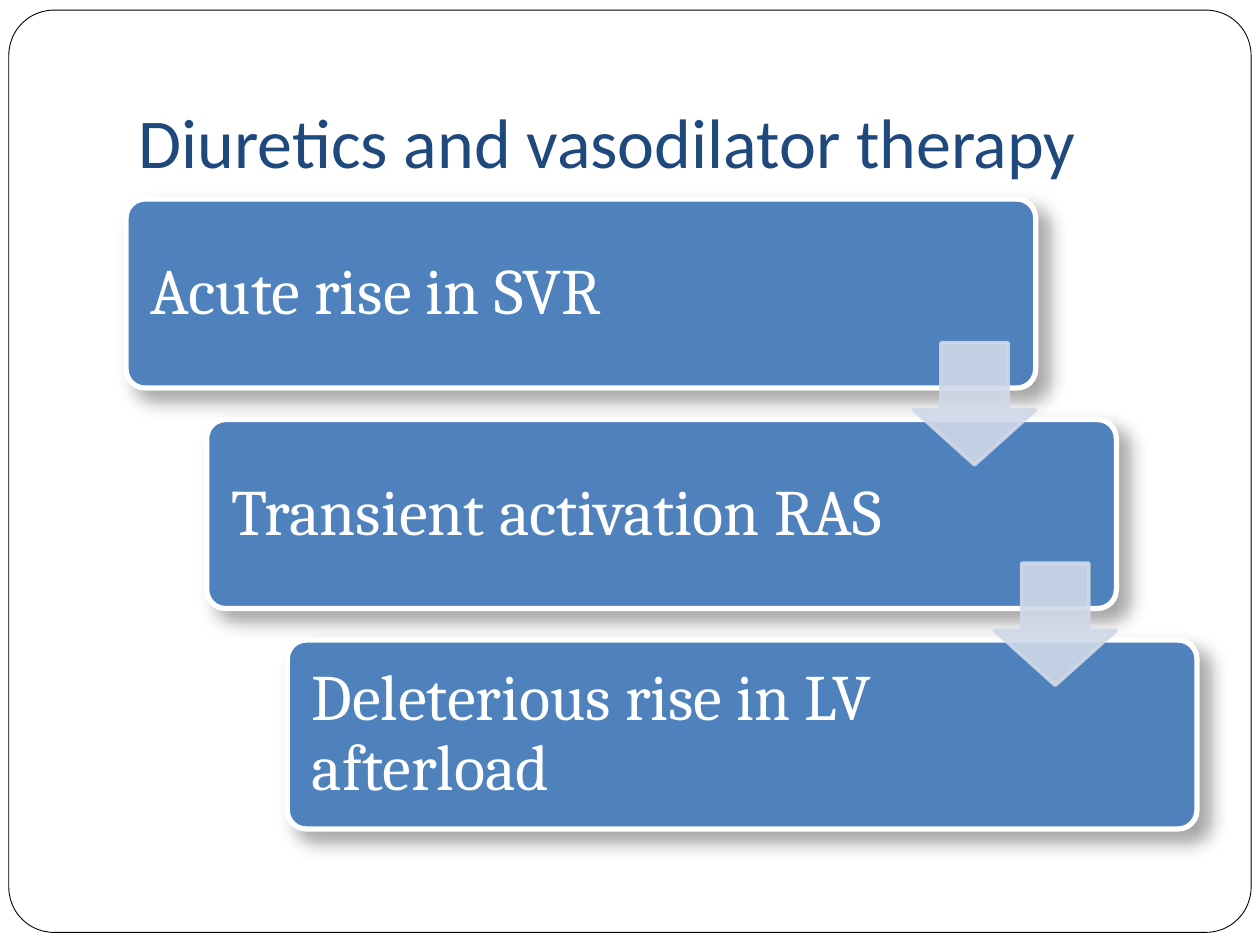
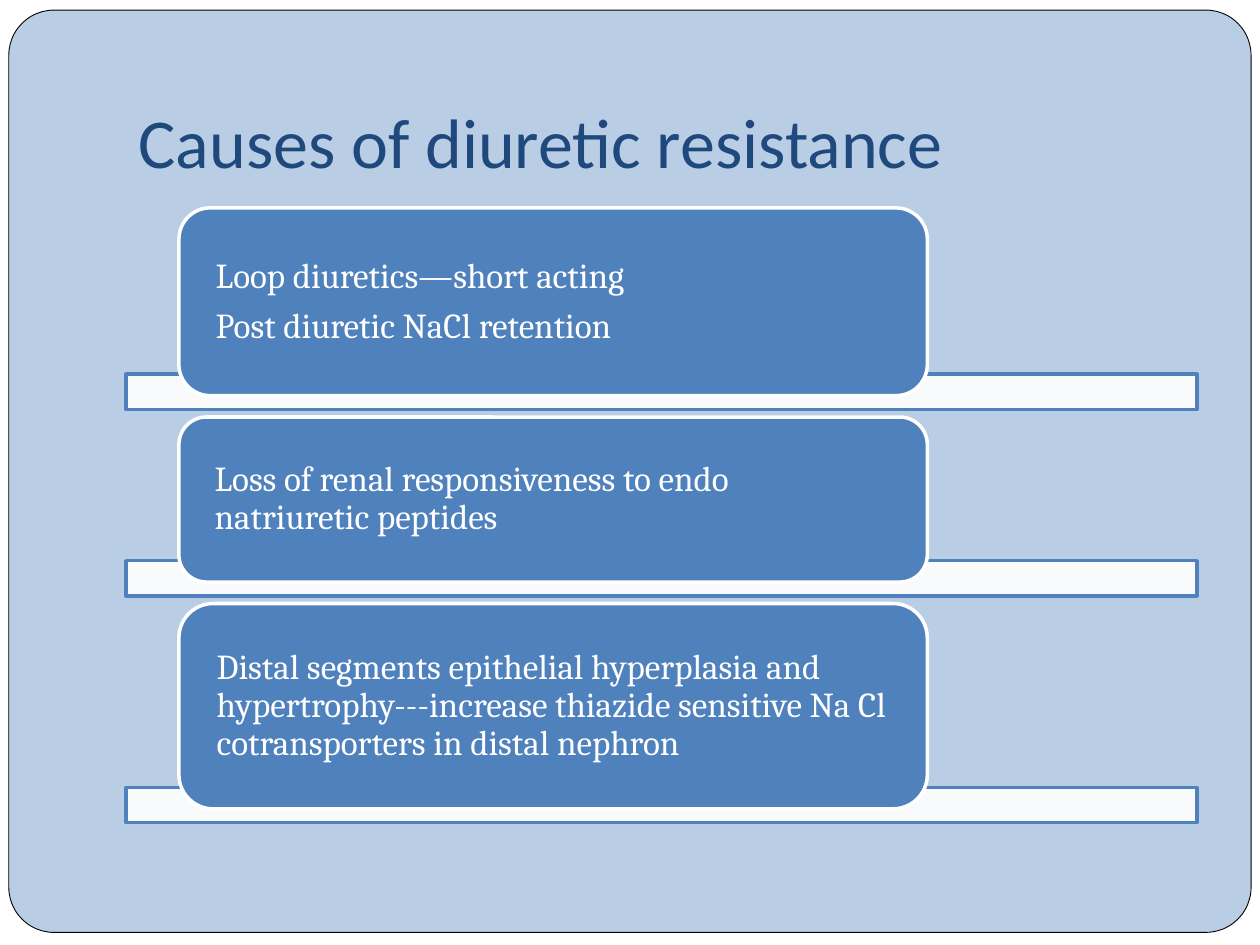
from lxml import etree
from pptx import Presentation
from pptx.dml.color import RGBColor
from pptx.enum.shapes import MSO_SHAPE
from pptx.enum.text import MSO_ANCHOR, MSO_AUTO_SIZE, PP_ALIGN
from pptx.oxml.ns import qn
from pptx.util import Emu, Pt

ROUNDED = MSO_SHAPE.ROUNDED_RECTANGLE
RECTANGLE = MSO_SHAPE.RECTANGLE
DOWN_ARROW = MSO_SHAPE.DOWN_ARROW
MIDDLE, BOTTOM = MSO_ANCHOR.MIDDLE, MSO_ANCHOR.BOTTOM
LEFT = PP_ALIGN.LEFT
NO_FIT = MSO_AUTO_SIZE.NONE

EMU_PER_PX = 9144
TITLE_ONLY = 5
TITLE_FONT, BODY_FONT = "Calibri", "Cambria"
COLORS = {
    "white": "FFFFFF",
    "black": "000000",
    "navy": "1F497D",
    "blue": "4F81BD",
    "pale": "B9CDE5",
    "arrow": "D0D8E8",
}

STEPS = [
    "Acute rise in SVR",
    "Transient activation RAS",
    "Deleterious rise in LV afterload",
]
CAUSES = [
    (149, ["Loop diuretics—short acting", "Post diuretic NaCl retention"]),
    (131, ["Loss of renal responsiveness to endo natriuretic peptides"]),
    (163, ["Distal segments epithelial hyperplasia and hypertrophy---increase "
           "thiazide sensitive Na Cl cotransporters in distal nephron"]),
]


def px(length):
    return Emu(length * EMU_PER_PX)


def rgb(name):
    return RGBColor.from_string(COLORS[name])


class SlideBuilder:
    """Hold the shared style and the current slide, and draw each kind of element."""

    def __init__(self):
        self.deck = Presentation()
        self.deck.slide_width, self.deck.slide_height = px(1000), px(750)
        self.page = None

    def start(self, title, ground):
        layout = self.deck.slide_layouts[TITLE_ONLY]
        self.page = self.deck.slides.add_slide(layout)
        panel = self.shape(ROUNDED, (7, 8, 986, 732), ground, "black", 0.5, [0.049])
        panel.element.getparent().insert(2, panel.element)
        heading = self.page.shapes.title
        heading.left, heading.top, heading.width, heading.height = map(px, (100, 30, 850, 125))
        self.fill_text(heading, [title], 40, TITLE_FONT, "navy", (10, 5, 10, 10), BOTTOM)

    def shape(self, kind, place, fill, line, weight, adjust=()):
        box = self.page.shapes.add_shape(kind, *map(px, place))
        for index, value in enumerate(adjust):
            box.adjustments[index] = value
        box.fill.solid()
        box.fill.fore_color.rgb = rgb(fill)
        box.line.color.rgb = rgb(line)
        box.line.width = Pt(weight)
        box.shadow.inherit = False
        return box

    def fill_text(self, box, lines, size, font, color, insets,
                  anchor=MIDDLE, spacing=1.0, after=0):
        frame = box.text_frame
        frame.word_wrap = True
        frame.auto_size = NO_FIT
        frame.vertical_anchor = anchor
        (frame.margin_left, frame.margin_top,
         frame.margin_right, frame.margin_bottom) = map(px, insets)
        for index, line in enumerate(lines):
            para = frame.add_paragraph() if index else frame.paragraphs[0]
            para.alignment = LEFT
            para.line_spacing = spacing
            para.space_after = Pt(after)
            span = para.add_run()
            span.text = line
            span.font.size = Pt(size)
            span.font.name = font
            span.font.color.rgb = rgb(color)

    def card(self, place, lines, size, insets, weight, adjust=()):
        box = self.shape(ROUNDED, place, "blue", "white", weight, adjust)
        self.fill_text(box, lines, size, BODY_FONT, "white", insets,
                       spacing=0.9, after=round(size * 0.35))
        return box

    def arrow(self, place):
        box = self.shape(DOWN_ARROW, place, "arrow", "arrow", 2, [0.55, 0.45])
        self.fade(box, 90, "a:solidFill", "a:ln")

    def bar(self, place):
        box = self.shape(RECTANGLE, place, "white", "blue", 2)
        self.fade(box, 90, "a:solidFill")

    def fade(self, box, percent, *parents):
        properties = box.element.spPr
        for parent in parents:
            color = next(properties.find(qn(parent)).iter(qn("a:srgbClr")))
            etree.SubElement(color, qn("a:alpha"), val=str(percent * 1000))

    def cast_shadow(self, box):
        effects = box.element.spPr.find(qn("a:effectLst"))
        shadow = etree.SubElement(
            effects, qn("a:outerShdw"), blurRad=str(Pt(10.2)), dist=str(Pt(8)),
            dir=str(45 * 60000), algn="tl", rotWithShape="0")
        color = etree.SubElement(shadow, qn("a:srgbClr"), val=COLORS["black"])
        etree.SubElement(color, qn("a:alpha"), val="35000")


def add_therapy(slides):
    slides.start("Diuretics and vasodilator therapy", "white")
    shift, pitch = 64, 175
    for index, step in enumerate(STEPS):
        place = (100 + shift * index, 158 + pitch * index, 722, 150)
        box = slides.card(place, [step], 37, (15, 15, 176, 15), 3, [0.1])
        slides.cast_shadow(box)
    for index in range(len(STEPS) - 1):
        slides.arrow((725 + shift * index, 272 + pitch * index, 97, 97))


def add_resistance(slides):
    slides.start("Causes of diuretic resistance", "pale")
    top, gap = 165, 17
    for height, lines in CAUSES:
        slides.bar((100, top + height - gap, 850, 28))
        slides.card((142, top, 594, height), lines, 20, (22, 0, 22, 0), 2)
        top += height + gap


def main():
    slides = SlideBuilder()
    add_therapy(slides)
    add_resistance(slides)
    slides.deck.save("out.pptx")


if __name__ == "__main__":
    main()
